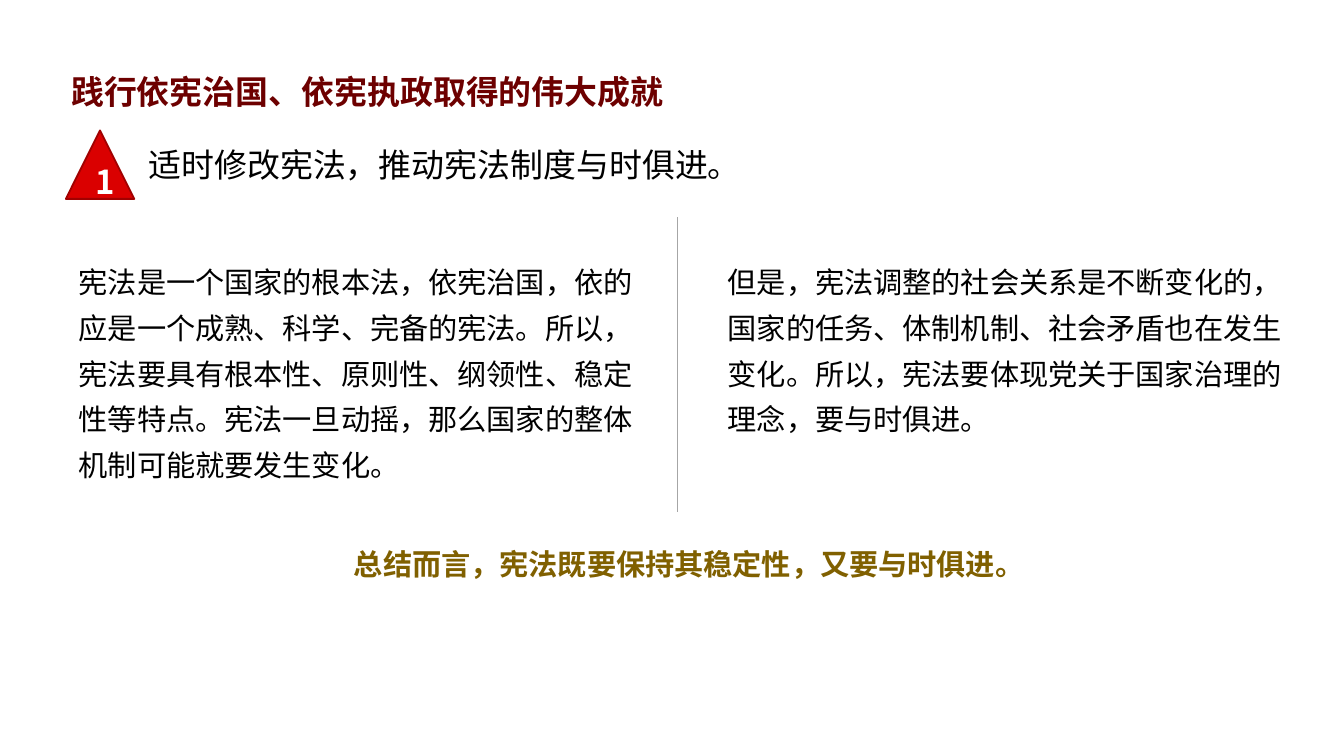
from lxml import etree
from pptx import Presentation
from pptx.dml.color import RGBColor
from pptx.enum import shapes, text
from pptx.oxml import ns
from pptx.util import Inches, Pt

FONT = "Noto Sans CJK SC"


def color(value):
    return RGBColor.from_string(value)


def write(shape, words, size, hex_color, bold=False):
    shape.text_frame.word_wrap = True
    paragraph = shape.text_frame.paragraphs[0]
    run = paragraph.add_run()
    run.text = words
    run.font.size = Pt(size)
    run.font.bold = bold
    run.font.name = FONT
    run.font.color.rgb = color(hex_color)
    east_asian = etree.SubElement(run.font._element, ns.qn("a:ea"))
    east_asian.set("typeface", FONT)
    return paragraph


presentation = Presentation()
presentation.slide_width = Inches(10.21)
presentation.slide_height = Inches(5.74)
slide = presentation.slides.add_slide(presentation.slide_layouts[5])

title = slide.shapes.title
title.left, title.top = Inches(0.44), Inches(0.49)
title.width, title.height = Inches(4.76), Inches(0.4)
title.text_frame.vertical_anchor = text.MSO_ANCHOR.TOP
title.text_frame.auto_size = text.MSO_AUTO_SIZE.NONE
paragraph = write(title, "践行依宪治国、依宪执政取得的伟大成就", 18, "6D0000", True)
paragraph.alignment = text.PP_ALIGN.LEFT

subtitle = slide.shapes.add_textbox(Inches(1.03), Inches(1.05), Inches(4.75), Inches(0.4))
write(subtitle, "适时修改宪法，推动宪法制度与时俱进。", 18, "000000")

marker = slide.shapes.add_shape(
    shapes.MSO_SHAPE.ISOSCELES_TRIANGLE, Inches(0.5), Inches(0.99), Inches(0.52), Inches(0.52))
marker.shadow.inherit = False
marker.fill.solid()
marker.fill.fore_color.rgb = color("DA0000")
marker.line.color.rgb = color("A10000")
marker.line.width = Pt(1)
marker.text_frame.vertical_anchor = text.MSO_ANCHOR.MIDDLE
write(marker, "1", 18, "FFFFFF", True).alignment = text.PP_ALIGN.CENTER

columns = [
    (0.5, 1.85, "宪法是一个国家的根本法，依宪治国，依的应是一个成熟、科学、完备的宪法。所以，"
     "宪法要具有根本性、原则性、纲领性、稳定性等特点。宪法一旦动摇，那么国家的整体机制可能就要发生变化。"),
    (5.43, 1.5, "但是，宪法调整的社会关系是不断变化的，国家的任务、体制机制、社会矛盾也在发生变化。"
     "所以，宪法要体现党关于国家治理的理念，要与时俱进。"),
]
for left, height, words in columns:
    column = slide.shapes.add_textbox(Inches(left), Inches(1.88), Inches(4.45), Inches(height))
    paragraph = write(column, words, 16, "000000")
    paragraph.line_spacing = 1.3
    paragraph.space_after = Pt(4)

divider = slide.shapes.add_connector(
    shapes.MSO_CONNECTOR.STRAIGHT, Inches(5.15), Inches(1.65), Inches(5.15), Inches(3.89))
divider.line.color.rgb = color("A6A6A6")
divider.line.width = Pt(0.5)
etree.SubElement(divider._element.spPr, ns.qn("a:effectLst"))

conclusion = slide.shapes.add_textbox(Inches(2.59), Inches(4.1), Inches(5.35), Inches(0.37))
write(conclusion, "总结而言，宪法既要保持其稳定性，又要与时俱进。", 16, "806000", True)

presentation.save("out.pptx")
